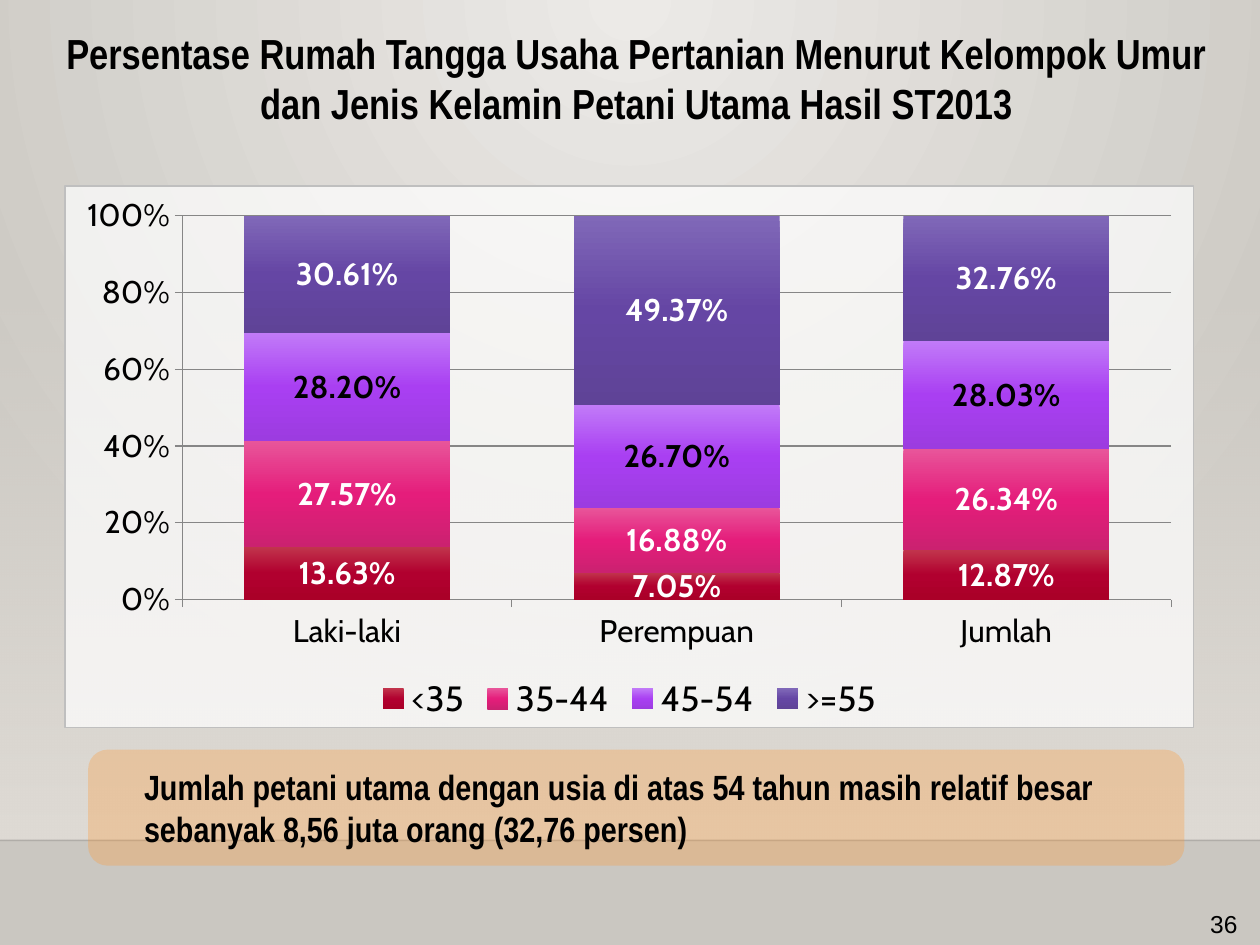
from dataclasses import dataclass

from lxml.etree import SubElement
from pptx import Presentation
from pptx.chart.data import CategoryChartData
from pptx.dml.color import RGBColor
from pptx.enum.chart import XL_CHART_TYPE, XL_LEGEND_POSITION, XL_TICK_MARK
from pptx.enum.shapes import MSO_CONNECTOR, MSO_SHAPE
from pptx.enum.text import MSO_ANCHOR, MSO_AUTO_SIZE, PP_ALIGN
from pptx.oxml import parse_xml
from pptx.oxml.ns import nsdecls, qn
from pptx.util import Inches, Pt


@dataclass(frozen=True)
class Theme:
    heading_font: str = "Arial Narrow"
    chart_font: str = "Cabin"
    number_font: str = "Arial"
    black: str = "000000"
    white: str = "FFFFFF"
    grid_line: str = "868686"
    border: str = "BFBFBF"
    callout: str = "FF9933"
    wall: str = "DFDBD5"
    glow: tuple = ("ECEAE7", "CAC7C1")
    title_size: int = 24
    callout_size: int = 20
    legend_size: int = 20
    chart_size: int = 18
    number_size: int = 14


THEME = Theme()
COLUMNS, ROWS = 100, 75
SLIDE_WIDTH, SLIDE_HEIGHT = Inches(10), Inches(7.5)

CATEGORIES = ("Laki-laki", "Perempuan", "Jumlah")
# Age group, shares, gradient from top to bottom, label colour
AGE_GROUPS = (
    ("<35", (0.1363, 0.0705, 0.1287), ("C1344C", "B1002F", "AA0028"), THEME.white),
    ("35-44", (0.2757, 0.1688, 0.2634), ("E8559A", "E51D7B", "CB2170"), THEME.white),
    ("45-54", (0.282, 0.267, 0.2803), ("C17AF8", "A93FF2", "9C3CE0"), THEME.black),
    (">=55", (0.3061, 0.4937, 0.3276), ("8068B8", "6546A4", "5F4397"), THEME.white),
)


def grid_box(column, row, columns, rows):
    """Turn grid columns and rows into left, top, width and height."""
    cell_width, cell_height = SLIDE_WIDTH / COLUMNS, SLIDE_HEIGHT / ROWS
    return (round(column * cell_width), round(row * cell_height),
            round(columns * cell_width), round(rows * cell_height))


def set_alpha(color_format_parent, percent):
    for color in color_format_parent.iter(qn("a:srgbClr")):
        SubElement(color, qn("a:alpha")).set("val", str(percent * 1000))


def set_gradient(fill, colors, direction, alphas=None):
    """Give a fill evenly spaced colour stops and a direction element."""
    fill.gradient()
    gradient = fill._fill._gradFill
    for child in list(gradient):
        gradient.remove(child)
    stops = SubElement(gradient, qn("a:gsLst"))
    for index, color in enumerate(colors):
        stop = SubElement(stops, qn("a:gs"))
        stop.set("pos", str(100000 * index // (len(colors) - 1)))
        SubElement(stop, qn("a:srgbClr")).set("val", color)
        if alphas:
            set_alpha(stop, alphas[index])
    gradient.append(parse_xml(direction))


DOWNWARD = f'<a:lin {nsdecls("a")} ang="5400000" scaled="0"/>'
FROM_TOP_CENTRE = (f'<a:path {nsdecls("a")} path="circle">'
                   '<a:fillToRect l="43000" t="0" r="43000" b="100000"/></a:path>')


def format_font(font, name, size, color, bold=False):
    font.name, font.size, font.bold = name, Pt(size), bold
    font.color.rgb = RGBColor.from_string(color)


def write_text(shape, text, *, font, size, bold=False, align=PP_ALIGN.LEFT, indent=0):
    frame = shape.text_frame
    frame.word_wrap = True
    frame.auto_size = MSO_AUTO_SIZE.NONE
    frame.vertical_anchor = MSO_ANCHOR.MIDDLE
    paragraph = frame.paragraphs[0]
    paragraph.alignment = align
    if indent:
        properties = paragraph._p.get_or_add_pPr()
        properties.set("marL", str(indent))
        properties.set("indent", "0")
    run = paragraph.add_run()
    run.text = text
    format_font(run.font, font, size, THEME.black, bold)


def add_plain_shape(slide, kind, box):
    shape = slide.shapes.add_shape(kind, *box)
    shape.shadow.inherit = False
    shape.line.fill.background()
    return shape


def add_backdrop(slide, wall_box):
    set_gradient(slide.background.fill, THEME.glow, FROM_TOP_CENTRE)
    # Wall fading in towards the floor
    wall = add_plain_shape(slide, MSO_SHAPE.RECTANGLE, wall_box)
    set_gradient(wall.fill, (THEME.wall, THEME.wall), DOWNWARD, alphas=(0, 100))
    # Floor edge
    left, top, width, height = wall_box
    edge = slide.shapes.add_connector(
        MSO_CONNECTOR.STRAIGHT, left, top + height, left + width, top + height)
    edge.line.width = Pt(1)
    edge.line.color.rgb = RGBColor.from_string(THEME.black)
    set_alpha(edge._element.spPr, 20)
    SubElement(edge._element.spPr, qn("a:effectLst"))


def add_title(slide, box, text):
    title = slide.shapes.title
    title.left, title.top, title.width, title.height = box
    write_text(title, text, font=THEME.heading_font, size=THEME.title_size,
               bold=True, align=PP_ALIGN.CENTER)


def format_axes(chart):
    value_axis, category_axis = chart.value_axis, chart.category_axis
    value_axis.minimum_scale, value_axis.maximum_scale = 0, 1
    value_axis.major_unit = 0.2
    value_axis.tick_labels.number_format = "0%"
    value_axis.tick_labels.number_format_is_linked = False
    value_axis.has_major_gridlines = True
    for axis in (value_axis, category_axis):
        axis.major_tick_mark = XL_TICK_MARK.OUTSIDE
    for line in (value_axis.major_gridlines.format.line,
                 value_axis.format.line, category_axis.format.line):
        line.color.rgb = RGBColor.from_string(THEME.grid_line)
        line.width = Pt(0.75)


def format_chart_area(chart):
    chart._chartSpace.find(qn("c:txPr")).addprevious(parse_xml(
        f'<c:spPr {nsdecls("c", "a")}><a:solidFill><a:srgbClr val="{THEME.white}">'
        '<a:alpha val="71000"/></a:srgbClr></a:solidFill><a:ln w="9525"><a:solidFill>'
        f'<a:srgbClr val="{THEME.border}"/></a:solidFill></a:ln></c:spPr>'))
    # Inner plot area as shares of the chart
    plot_area = chart._chartSpace.chart.plotArea
    for layout in plot_area.findall(qn("c:layout")):
        plot_area.remove(layout)
    shares = "".join(f'<c:{name} val="{share}"/>' for name, share in
                     (("x", 0.104), ("y", 0.055), ("w", 0.876), ("h", 0.709)))
    plot_area.insert(0, parse_xml(
        f'<c:layout {nsdecls("c")}><c:manualLayout><c:layoutTarget val="inner"/>'
        f'<c:xMode val="edge"/><c:yMode val="edge"/>{shares}</c:manualLayout></c:layout>'))


def add_age_chart(slide, box):
    data = CategoryChartData(number_format="0.00%")
    data.categories = CATEGORIES
    for name, values, _, _ in AGE_GROUPS:
        data.add_series(name, values)
    chart = slide.shapes.add_chart(XL_CHART_TYPE.COLUMN_STACKED_100, *box, data).chart
    chart.has_title = False
    format_font(chart.font, THEME.chart_font, THEME.chart_size, THEME.black)
    format_axes(chart)
    format_chart_area(chart)
    # Legend
    chart.has_legend = True
    chart.legend.position = XL_LEGEND_POSITION.BOTTOM
    chart.legend.include_in_layout = False
    format_font(chart.legend.font, THEME.chart_font, THEME.legend_size, THEME.black)
    # Columns and their labels
    plot = chart.plots[0]
    plot.gap_width, plot.overlap, plot.vary_by_categories = 60, 100, False
    for series, (_, _, colors, label_color) in zip(plot.series, AGE_GROUPS):
        set_gradient(series.format.fill, colors, DOWNWARD)
        labels = series.data_labels
        labels.show_value = True
        labels.number_format, labels.number_format_is_linked = "0.00%", False
        format_font(labels.font, THEME.chart_font, THEME.chart_size, label_color, True)


def add_callout(slide, box, text):
    callout = add_plain_shape(slide, MSO_SHAPE.ROUNDED_RECTANGLE, box)
    callout.fill.solid()
    callout.fill.fore_color.rgb = RGBColor.from_string(THEME.callout)
    set_alpha(callout._element.spPr, 30)
    write_text(callout, text, font=THEME.heading_font, size=THEME.callout_size,
               bold=True, indent=Inches(0.3))


def add_slide_number(slide, box, text):
    write_text(slide.shapes.add_textbox(*box), text, font=THEME.number_font,
               size=THEME.number_size, align=PP_ALIGN.RIGHT)


def main():
    presentation = Presentation()
    presentation.slide_width, presentation.slide_height = SLIDE_WIDTH, SLIDE_HEIGHT
    slide = presentation.slides.add_slide(presentation.slide_layouts[5])
    add_backdrop(slide, grid_box(0, 22, COLUMNS, 44.7))
    add_title(slide, grid_box(3.5, 1.6, 94, 9.1),
              "Persentase Rumah Tangga Usaha Pertanian Menurut Kelompok Umur "
              "dan Jenis Kelamin Petani Utama Hasil ST2013")
    add_callout(slide, grid_box(7, 59.5, 87, 9.2),
                "Jumlah petani utama dengan usia di atas 54 tahun masih relatif besar "
                "sebanyak 8,56 juta orang (32,76 persen)")
    add_age_chart(slide, grid_box(5.1, 14.7, 89.7, 43.1))
    add_slide_number(slide, grid_box(75.9, 71.3, 23.3, 4), "36")
    presentation.save("out.pptx")


if __name__ == "__main__":
    main()
